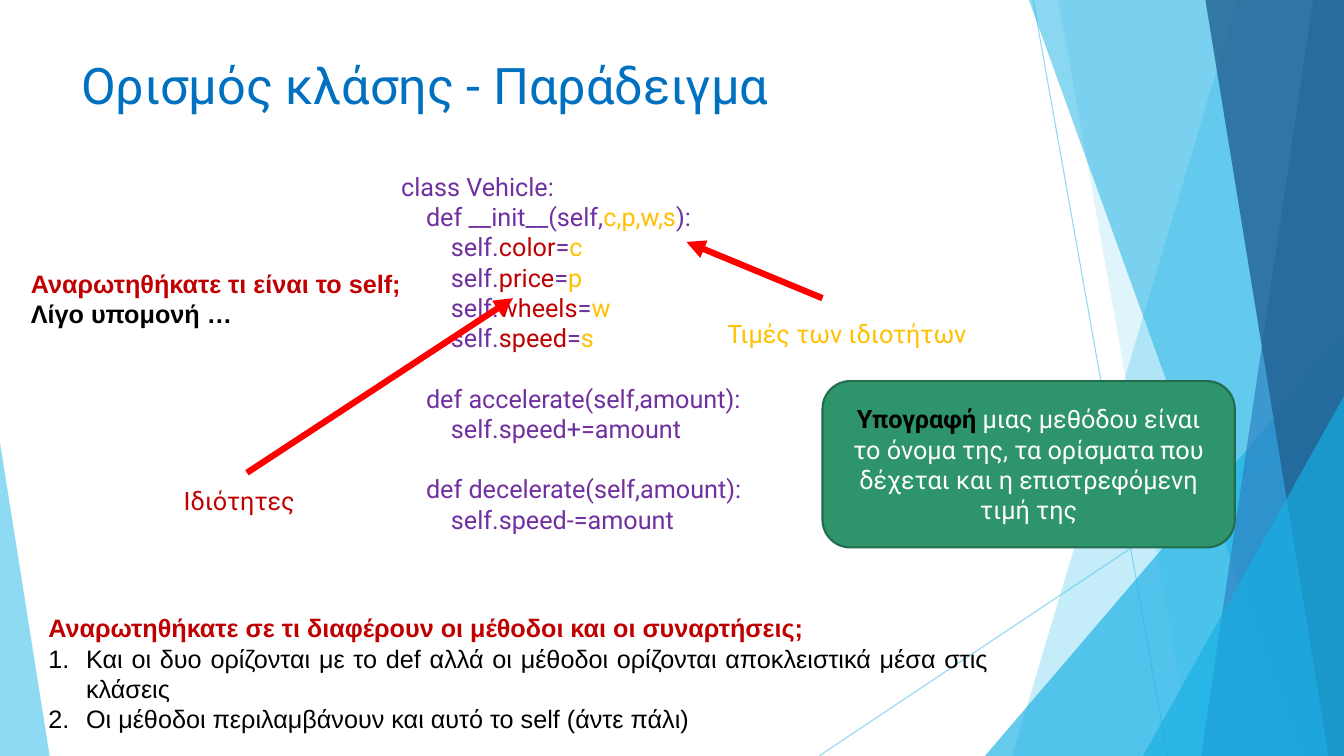
from pptx import Presentation
from pptx.dml.color import RGBColor
from pptx.enum.shapes import MSO_CONNECTOR as Connector, MSO_SHAPE as Shape
from pptx.enum.text import MSO_ANCHOR as Anchor, PP_ALIGN as Align
from pptx.oxml.ns import qn
from pptx.util import Pt
from lxml.etree import SubElement

WIDTH, HEIGHT = 960, 540
LINE_HEIGHT = 21.6
COLORS = {
    "sky": "5FCBEF", "cyan": "17B0E4", "blue": "2E83C3", "navy": "226292",
    "title": "0070C0", "code": "7030A0", "attribute": "C00000", "value": "FFC000",
    "arrow": "FF0000", "green": "2E946B", "dark green": "226D4F",
    "black": "000000", "white": "FFFFFF",
}


class SlideBuilder:
    def __init__(self, slide, font="Roboto", size=18):
        self.slide, self.font, self.size = slide, font, size

    def paint(self, fill, color, opacity=100):
        fill.solid()
        fill.fore_color.rgb = RGBColor.from_string(COLORS[color])
        if opacity < 100:
            color_element = fill._xPr.find(qn("a:solidFill"))[0]
            SubElement(color_element, qn("a:alpha"), val=str(opacity * 1000))

    def line(self, start, end, color, width, opacity=100, arrow=False):
        connector = self.slide.shapes.add_connector(
            Connector.STRAIGHT, *map(Pt, start + end))
        connector.line.width = Pt(width)
        self.paint(connector.line.fill, color, opacity)
        if arrow:
            SubElement(connector.line._get_or_add_ln(), qn("a:tailEnd"), type="triangle")
        SubElement(connector._element.spPr, qn("a:effectLst"))

    def facet(self, top_x, bottom_x, color, opacity):
        """Fill the full-height area from a slanted left edge to the slide's right edge."""
        builder = self.slide.shapes.build_freeform(top_x, 0, scale=Pt(1))
        builder.add_line_segments([(WIDTH, 0), (WIDTH, HEIGHT), (bottom_x, HEIGHT)])
        shape = builder.convert_to_shape()
        shape.shadow.inherit = False
        shape.line.fill.background()
        self.paint(shape.fill, color, opacity)

    def triangle(self, left, top, width, apex, color, opacity):
        """Add a triangle that stands on the slide's bottom edge."""
        shape = self.slide.shapes.add_shape(
            Shape.ISOSCELES_TRIANGLE, *map(Pt, (left, top, width, HEIGHT - top)))
        shape.adjustments[0] = apex
        shape.shadow.inherit = False
        shape.line.fill.background()
        self.paint(shape.fill, color, opacity)

    def fill_text(self, frame, paragraphs, align, font=None, size=None):
        """Fill a text frame; each paragraph is a list of (text, color, bold) runs."""
        frame.word_wrap = True
        for index, runs in enumerate(paragraphs):
            paragraph = frame.add_paragraph() if index else frame.paragraphs[0]
            paragraph.alignment = align
            for text, color, bold in runs:
                run = paragraph.add_run()
                run.text = text
                run.font.name = font or self.font
                run.font.size = Pt(size or self.size)
                run.font.bold = bold
                run.font.color.rgb = RGBColor.from_string(COLORS[color])
        return frame.paragraphs

    def text(self, box, paragraphs, align=Align.LEFT, font=None, size=None):
        text_box = self.slide.shapes.add_textbox(*map(Pt, box))
        return self.fill_text(text_box.text_frame, paragraphs, align, font, size)

    def callout(self, box, runs):
        shape = self.slide.shapes.add_shape(Shape.ROUNDED_RECTANGLE, *map(Pt, box))
        shape.shadow.inherit = False
        self.paint(shape.fill, "green")
        self.paint(shape.line.fill, "dark green")
        shape.line.width = Pt(1.5)
        shape.text_frame.vertical_anchor = Anchor.MIDDLE
        self.fill_text(shape.text_frame, [runs], Align.CENTER)

    def number(self, paragraphs, indent=27):
        for paragraph in paragraphs:
            properties = paragraph._p.get_or_add_pPr()
            properties.set("marL", str(Pt(indent)))
            properties.set("indent", str(-Pt(indent)))
            SubElement(properties, qn("a:buFont"), typeface="+mj-lt")
            SubElement(properties, qn("a:buAutoNum"), type="arabicPeriod")


presentation = Presentation()
presentation.slide_width, presentation.slide_height = Pt(WIDTH), Pt(HEIGHT)
builder = SlideBuilder(presentation.slides.add_slide(presentation.slide_layouts[6]))

# Background facets
builder.line((738, 0), (834, HEIGHT), "sky", 0.75, opacity=70)
builder.line((WIDTH, 290), (585, HEIGHT), "sky", 0.75, opacity=70)
builder.facet(884, 723, "sky", 36)
builder.facet(756, 852, "sky", 20)
builder.triangle(703.5, 240, 256.5, 1, "cyan", 66)
builder.facet(735, 929.5, "cyan", 50)
builder.facet(938, 858.5, "blue", 70)
builder.facet(861, 949, "navy", 80)
builder.triangle(816.5, 283, 143.5, 1, "cyan", 66)
builder.triangle(0, 316, 35.5, 0, "sky", 70)

builder.text((51, 35.3, 741, 62),
             [[("Ορισμός κλάσης - Παράδειγμα", "title", False)]], size=36)

# Class listing
code = [
    [("class Vehicle:", "code", False)],
    [("    def __init__(self,", "code", False), ("c,p,w,s", "value", False),
     ("):", "code", False)],
]
for attribute in ("color", "price", "wheels", "speed"):
    code.append([("        self.", "code", False), (attribute, "attribute", False),
                 ("=", "code", False), (attribute[0], "value", False)])
method_starts = []
for method, sign in (("accelerate", "+="), ("decelerate", "-=")):
    method_starts.append(len(code))
    code.append([(f"    def {method}(self,amount):", "code", False)])
    code.append([(f"        self.speed{sign}amount", "code", False)])
code_paragraphs = builder.text((279.4, 118.8, 411, 291), code)
for start in method_starts:
    code_paragraphs[start].space_before = Pt(LINE_HEIGHT)

# Labels with arrows
builder.line((587.5, 213), (490.3, 172.8), "arrow", 4.5, arrow=True)
builder.text((497.5, 224, 215, 29),
             [[("Τιμές των ιδιοτήτων", "value", False)]], Align.CENTER)
builder.line((176.4, 337.7), (366.5, 213), "arrow", 4.5, arrow=True)
builder.text((63.4, 343.4, 215, 29),
             [[("Ιδιότητες", "attribute", False)]], Align.CENTER)

# Questions
builder.text((15, 188, 288, 51), [
    [("Αναρωτηθήκατε τι είναι το self;", "attribute", True)],
    [("Λίγο υπομονή …", "black", True)],
], Align.JUSTIFY, font="Arial")
answers = builder.text((27.4, 434, 685.4, 94.3), [
    [("Αναρωτηθήκατε σε τι διαφέρουν οι μέθοδοι και οι συναρτήσεις;", "attribute", True)],
    [("Και οι δυο ορίζονται με το def αλλά οι μέθοδοι ορίζονται "
      "αποκλειστικά μέσα στις κλάσεις", "black", False)],
    [("Οι μέθοδοι περιλαμβάνουν και αυτό το self (άντε πάλι)", "black", False)],
], Align.JUSTIFY, font="Arial")
builder.number(answers[1:])

builder.callout((587.5, 272.2, 294.5, 118.8), [
    ("Υπογραφή", "black", True),
    (" μιας μεθόδου είναι το όνομα της, τα ορίσματα που δέχεται "
     "και η επιστρεφόμενη τιμή της", "white", False),
])

presentation.save("out.pptx")
